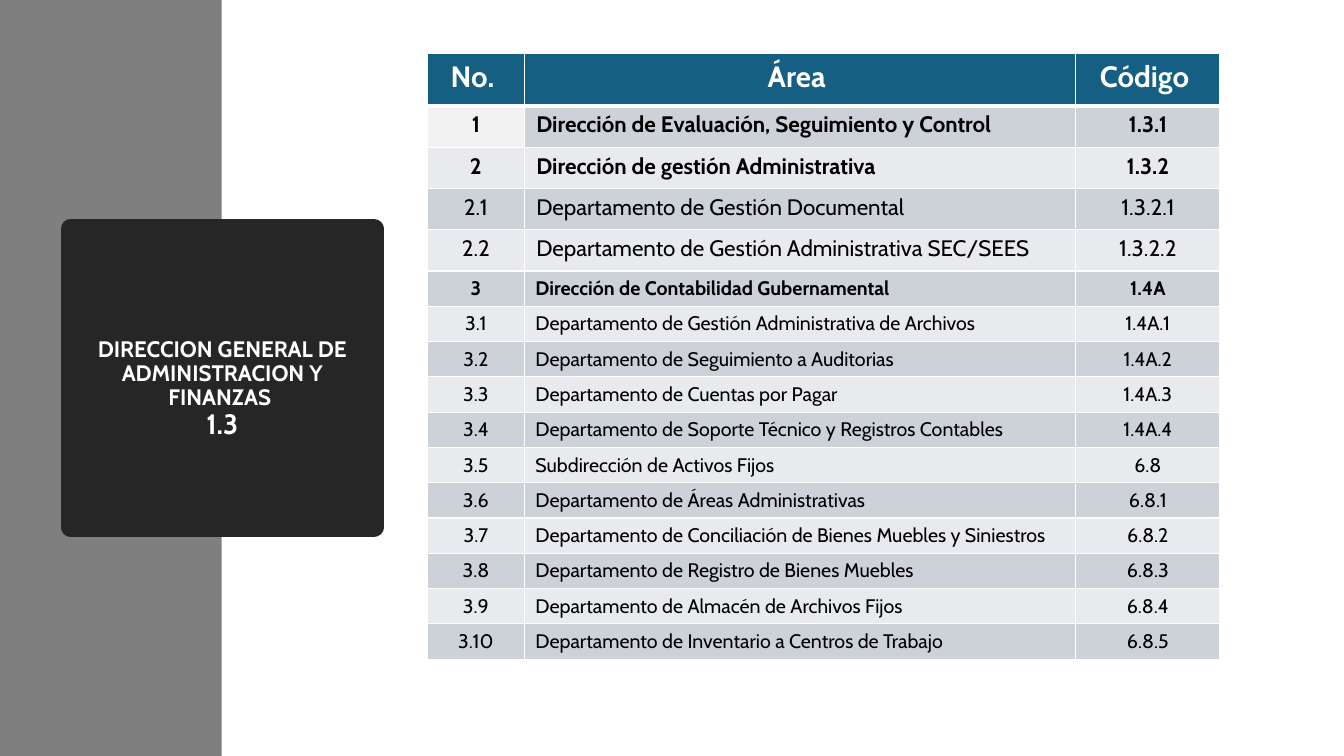
"""Builds the slide listing the areas and codes of the administration and finance office."""
from dataclasses import dataclass

from lxml.etree import SubElement
from pptx import Presentation
from pptx.dml.color import RGBColor
from pptx.enum.shapes import MSO_SHAPE
from pptx.enum.text import MSO_ANCHOR, MSO_AUTO_SIZE, PP_ALIGN
from pptx.oxml import parse_xml
from pptx.oxml.ns import nsdecls, qn
from pptx.util import Inches, Pt

OFFICE = "DIRECCION GENERAL DE ADMINISTRACION Y FINANZAS "
OFFICE_CODE = "1.3"
HEADINGS = ("No. ", "Área ", "Código ")
AREAS = [
    ("1", "Dirección de Evaluación, Seguimiento y Control", "1.3.1"),
    ("2", "Dirección de gestión Administrativa", "1.3.2"),
    ("2.1", "Departamento de Gestión Documental", "1.3.2.1"),
    ("2.2", "Departamento de Gestión Administrativa SEC/SEES", "1.3.2.2"),
    ("3", "Dirección de Contabilidad Gubernamental", "1.4A"),
    ("3.1", "Departamento de Gestión Administrativa de Archivos", "1.4A.1"),
    ("3.2", "Departamento de Seguimiento a Auditorias", "1.4A.2"),
    ("3.3", "Departamento de Cuentas por Pagar", "1.4A.3"),
    ("3.4", "Departamento de Soporte Técnico y Registros Contables", "1.4A.4"),
    ("3.5", "Subdirección de Activos Fijos", "6.8"),
    ("3.6", "Departamento de Áreas Administrativas", "6.8.1"),
    ("3.7", "Departamento de Conciliación de Bienes Muebles y Siniestros", "6.8.2"),
    ("3.8", "Departamento de Registro de Bienes Muebles", "6.8.3"),
    ("3.9", "Departamento de Almacén de Archivos Fijos", "6.8.4"),
    ("3.10", "Departamento de Inventario a Centros de Trabajo", "6.8.5"),
]


@dataclass(frozen=True)
class Theme:
    """Colours, font and type sizes of the slide."""
    font: str = "Cabin"
    white: str = "FFFFFF"
    black: str = "000000"
    band: str = "7F7F7F"
    card: str = "262626"
    header: str = "156082"
    first: str = "F2F2F2"
    stripes: tuple = ("CCD2D8", "E8EAED")
    heading_size: float = 21
    code_size: float = 20
    large: float = 16
    small: float = 14


THEME = Theme()
WIDTH, HEIGHT = 13.33, 7.5
BAND_SHARE = 0.165
CARD = (0.7, 2.27, 3.01, 2.96)
TABLE_LEFT, TABLE_TOP = 4.24, 0.53
COLUMNS = (0.96, 5.47, 1.43)
LARGE_ROWS = 4
ROWS = [0.52] + [0.41] * LARGE_ROWS + [0.35] * (len(AREAS) - LARGE_ROWS)


def paint(fill, color):
    """Give a fill one solid colour."""
    fill.solid()
    fill.fore_color.rgb = RGBColor.from_string(color)


def write(paragraph, text, *, size, color, bold=False, align=PP_ALIGN.CENTER):
    """Add a formatted run to a paragraph."""
    paragraph.alignment = align
    run = paragraph.add_run()
    run.text = text
    font = run.font
    font.name, font.size, font.bold = THEME.font, Pt(size), bold
    font.color.rgb = RGBColor.from_string(color)


def set_borders(cell, **widths):
    """Draw white borders, 1 pt wide unless a side is given."""
    properties = cell._tc.get_or_add_tcPr()
    for place, side in enumerate("LRTB"):
        properties.insert(place, parse_xml(
            f'<a:ln{side} {nsdecls("a")} w="{Pt(widths.get(side, 1))}"><a:solidFill>'
            f'<a:srgbClr val="{THEME.white}"/></a:solidFill></a:ln{side}>'))


def add_band(slide):
    """Add the grey band down the left edge."""
    band = slide.shapes.add_shape(
        MSO_SHAPE.RECTANGLE, 0, 0, Inches(WIDTH * BAND_SHARE), Inches(HEIGHT))
    band.shadow.inherit = False
    paint(band.fill, THEME.band)
    band.line.fill.background()


def format_title(slide):
    """Turn the title into a dark card over the band."""
    title = slide.shapes.title
    slide.shapes._spTree.append(title._element)
    title.left, title.top, title.width, title.height = map(Inches, CARD)
    paint(title.fill, THEME.card)
    paint(title.line.fill, THEME.card)
    title.line.width = Pt(13.75)
    SubElement(title.line._get_or_add_ln(), qn("a:round"))
    frame = title.text_frame
    frame.word_wrap, frame.auto_size = True, MSO_AUTO_SIZE.NONE
    frame.vertical_anchor = MSO_ANCHOR.MIDDLE
    frame.margin_top = Inches(0.27)
    paragraph = frame.paragraphs[0]
    paragraph.line_spacing = 0.9
    write(paragraph, OFFICE, size=THEME.large, color=THEME.white, bold=True)
    paragraph.add_line_break()
    write(paragraph, OFFICE_CODE, size=THEME.code_size, color=THEME.white, bold=True)


def add_areas(slide):
    """Add the table of areas; whole numbers mark the bold rows."""
    table = slide.shapes.add_table(
        len(ROWS), len(COLUMNS), Inches(TABLE_LEFT), Inches(TABLE_TOP),
        Inches(sum(COLUMNS)), Inches(sum(ROWS))).table
    for column, width in zip(table.columns, COLUMNS):
        column.width = Inches(width)
    for r, values in enumerate([HEADINGS] + AREAS):
        table.rows[r].height = Inches(ROWS[r])
        is_header = r == 0
        is_large = r <= LARGE_ROWS
        body_size = THEME.large if is_large else THEME.small
        size = THEME.heading_size if is_header else body_size
        for c, value in enumerate(values):
            cell = table.cell(r, c)
            cell.margin_left = cell.margin_right = Inches(0.12 if is_large else 0.11)
            cell.margin_top = cell.margin_bottom = Pt(4)
            stripe = THEME.first if (r, c) == (1, 0) else THEME.stripes[(r - 1) % 2]
            paint(cell.fill, THEME.header if is_header else stripe)
            set_borders(cell, B=3 if is_header else 1, T=3 if r == 1 else 1)
            write(cell.text_frame.paragraphs[0], value, size=size,
                  color=THEME.white if is_header else THEME.black,
                  bold=is_header or "." not in values[0],
                  align=PP_ALIGN.LEFT if c == 1 and not is_header else PP_ALIGN.CENTER)


def main():
    """Build and save the slide."""
    deck = Presentation()
    deck.slide_width, deck.slide_height = Inches(WIDTH), Inches(HEIGHT)
    slide = deck.slides.add_slide(deck.slide_layouts[5])
    paint(slide.background.fill, THEME.white)
    add_band(slide)
    format_title(slide)
    add_areas(slide)
    deck.save("out.pptx")


if __name__ == "__main__":
    main()
